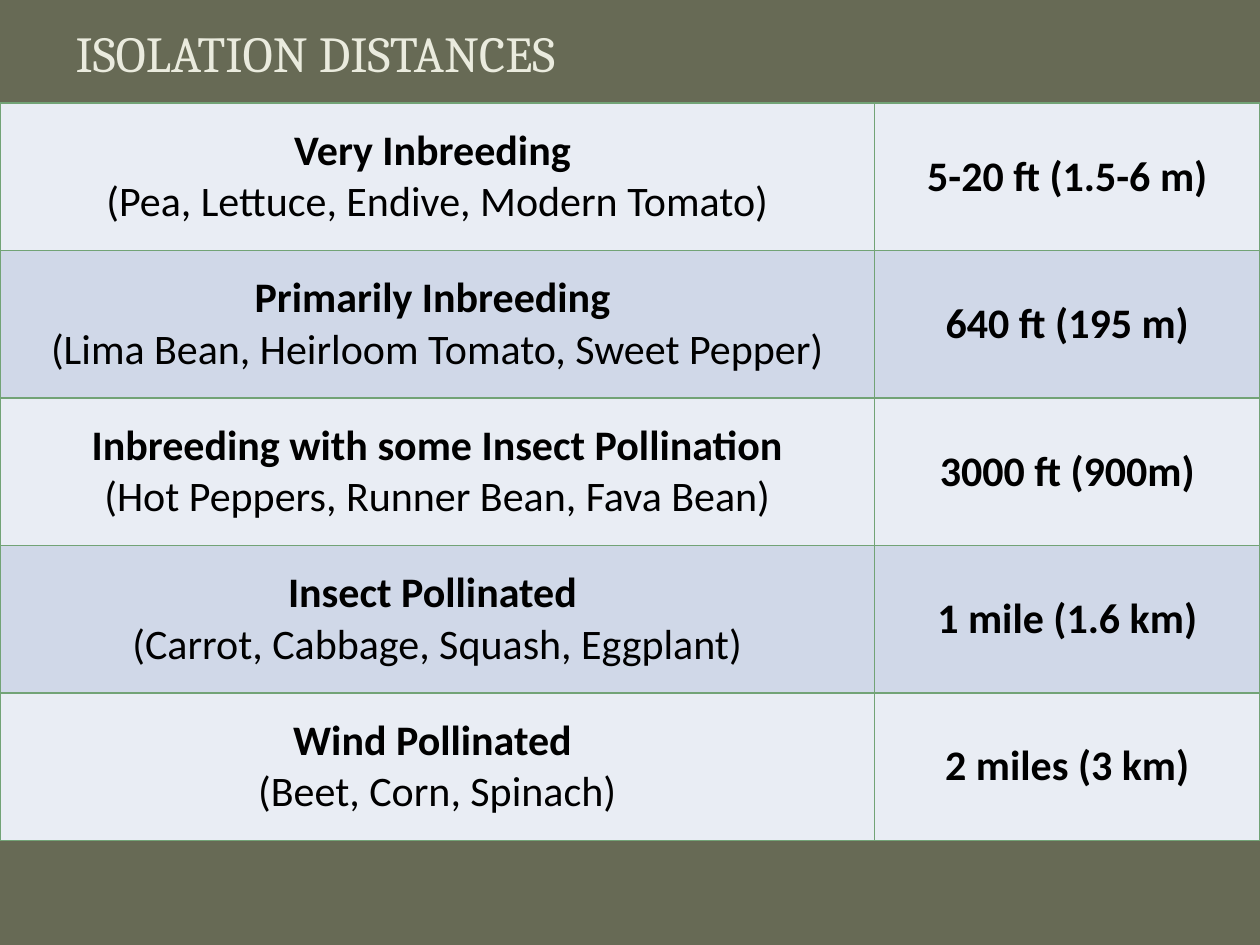
import dataclasses

import lxml.etree
import pptx
import pptx.dml.color
import pptx.enum.text
import pptx.oxml.ns
import pptx.util

Cm = pptx.util.Cm
RGB = pptx.dml.color.RGBColor.from_string


@dataclasses.dataclass(frozen=True)
class Theme:
    """Colours, fonts and type sizes of the slide."""
    background: str = "676A55"
    title: str = "EAEBDE"
    text: str = "000000"
    border: str = "72A376"
    bands: tuple = ("E9EDF4", "D0D8E8")
    title_font: str = "Cambria"
    body_font: str = "Calibri"
    title_size: float = 28.8
    body_size: float = 24
    border_width: float = 1


THEME = Theme()

DISTANCES = [
    ("Very Inbreeding ", "(Pea, Lettuce, Endive, Modern Tomato)", "5-20 ft (1.5-6 m)"),
    ("Primarily Inbreeding ", "(Lima Bean, Heirloom Tomato, Sweet Pepper)", "640 ft (195 m)"),
    ("Inbreeding with some Insect Pollination", "(Hot Peppers, Runner Bean, Fava Bean)",
     "3000 ft (900m)"),
    ("Insect Pollinated ", "(Carrot, Cabbage, Squash, Eggplant)", "1 mile (1.6 km)"),
    ("Wind Pollinated ", "(Beet, Corn, Spinach)", "2 miles (3 km)"),
]


def set_font(p, name, size, color, bold=False):
    """Set the font of a whole paragraph."""
    p.font.name = name
    p.font.size = pptx.util.Pt(size)
    p.font.bold = bold
    p.font.color.rgb = RGB(color)


def add_borders(cell):
    """Draw the theme border on all four sides of a cell."""
    tc_pr = cell._tc.get_or_add_tcPr()
    qn = pptx.oxml.ns.qn
    for side in ("lnL", "lnR", "lnT", "lnB"):
        width = str(pptx.util.Pt(THEME.border_width))
        ln = lxml.etree.SubElement(tc_pr, qn(f"a:{side}"), w=width)
        fill = lxml.etree.SubElement(ln, qn("a:solidFill"))
        lxml.etree.SubElement(fill, qn("a:srgbClr"), val=THEME.border)


def fill_cell(cell, lines, band):
    """Write centred lines, the first one bold, on a banded cell."""
    add_borders(cell)
    cell.fill.solid()
    cell.fill.fore_color.rgb = RGB(band)
    cell.vertical_anchor = pptx.enum.text.MSO_ANCHOR.MIDDLE
    tf = cell.text_frame
    tf.text = "\n".join(lines)
    for i, p in enumerate(tf.paragraphs):
        p.alignment = pptx.enum.text.PP_ALIGN.CENTER
        set_font(p, THEME.body_font, THEME.body_size, THEME.text, bold=i == 0)


def place_title(s, text, left, top, width, height):
    """Move and format the title placeholder."""
    sp = s.shapes.title
    sp.left, sp.top, sp.width, sp.height = left, top, width, height
    tf = sp.text_frame
    tf.text = text
    tf.auto_size = pptx.enum.text.MSO_AUTO_SIZE.NONE
    tf.vertical_anchor = pptx.enum.text.MSO_ANCHOR.MIDDLE
    p = tf.paragraphs[0]
    p.alignment = pptx.enum.text.PP_ALIGN.LEFT
    set_font(p, THEME.title_font, THEME.title_size, THEME.title)


def add_distance_table(s, left, top, width, height, crop_width):
    """Add the table of crop groups and their isolation distances."""
    table = s.shapes.add_table(len(DISTANCES), 2, left, top, width, height).table
    table.first_row = False
    table.columns[0].width = crop_width
    table.columns[1].width = width - crop_width
    for i, (group, crops, distance) in enumerate(DISTANCES):
        band = THEME.bands[i % 2]
        fill_cell(table.cell(i, 0), [group, crops], band)
        fill_cell(table.cell(i, 1), [distance], band)


def main():
    """Build and save the slide."""
    prs = pptx.Presentation()
    prs.slide_width, prs.slide_height = Cm(25.4), Cm(19.05)
    s = prs.slides.add_slide(prs.slide_layouts.get_by_name("Title Only"))
    s.background.fill.solid()
    s.background.fill.fore_color.rgb = RGB(THEME.background)
    place_title(s, "ISOLATION DISTANCES", Cm(1.27), Cm(0.43), Cm(22.86), Cm(1.27))
    add_distance_table(s, 0, Cm(2.08), prs.slide_width, Cm(14.86), Cm(17.63))
    prs.save("out.pptx")


if __name__ == "__main__":
    main()
